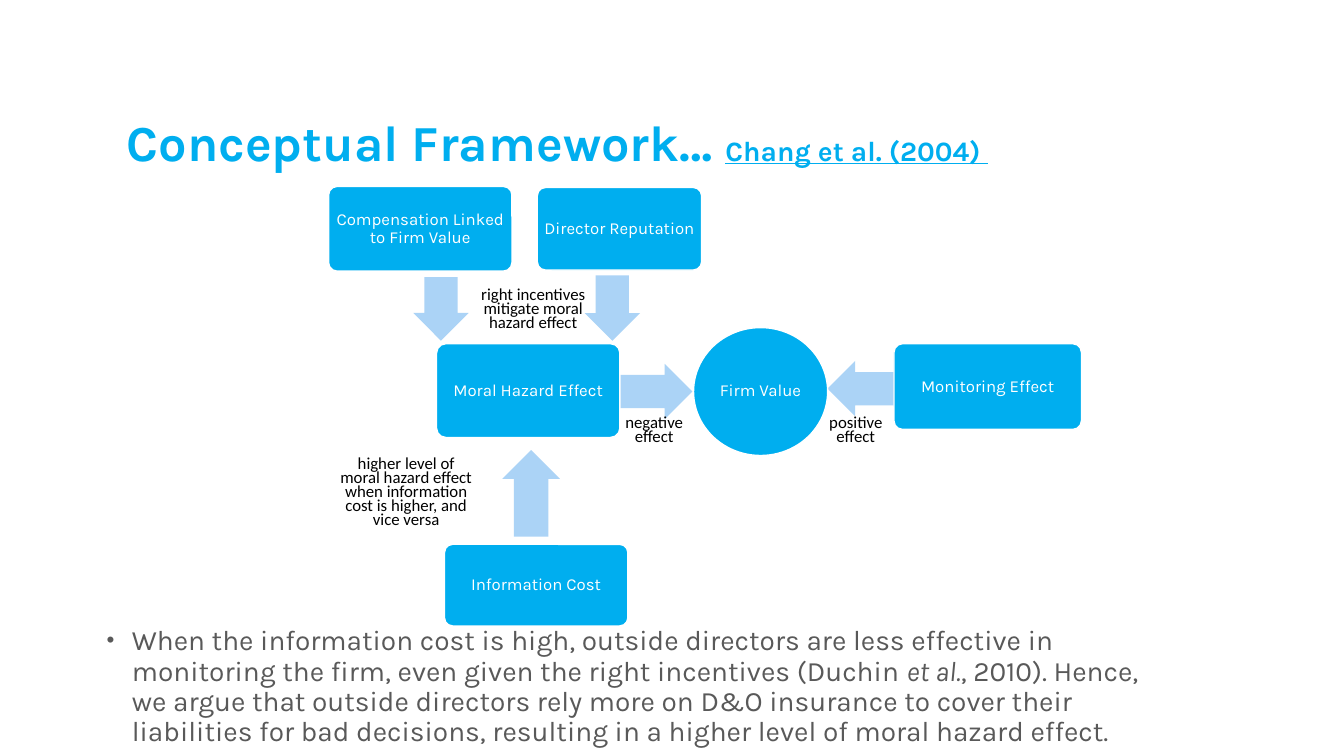
from dataclasses import dataclass
from typing import NamedTuple

from lxml import etree
from pptx import Presentation
from pptx.dml.color import RGBColor
from pptx.enum.shapes import MSO_SHAPE
from pptx.enum.text import MSO_ANCHOR, PP_ALIGN
from pptx.oxml.ns import qn
from pptx.shapes.autoshape import Shape
from pptx.slide import Slide
from pptx.text.text import TextFrame, _Paragraph
from pptx.util import Pt

ROUNDED, OVAL = MSO_SHAPE.ROUNDED_RECTANGLE, MSO_SHAPE.OVAL
DOWN, UP = MSO_SHAPE.DOWN_ARROW, MSO_SHAPE.UP_ARROW
LEFT, RIGHT = MSO_SHAPE.LEFT_ARROW, MSO_SHAPE.RIGHT_ARROW
TOP, MIDDLE, BOTTOM = MSO_ANCHOR.TOP, MSO_ANCHOR.MIDDLE, MSO_ANCHOR.BOTTOM
CENTER, LEFT_ALIGNED = PP_ALIGN.CENTER, PP_ALIGN.LEFT


@dataclass(frozen=True)
class Theme:
    accent: str = "00AEEF"
    arrow: str = "ABD3F6"
    white: str = "FFFFFF"
    body: str = "595959"
    ink: str = "000000"
    main_font: str = "Karla"
    label_font: str = "Calibri"
    title_size: int = 36
    text_size: int = 20
    diagram_size: int = 12


THEME = Theme()


class Box(NamedTuple):
    left: float
    top: float
    width: float
    height: float


class Node(NamedTuple):
    text: str
    box: Box
    outline: MSO_SHAPE = ROUNDED


class Arrow(NamedTuple):
    direction: MSO_SHAPE
    box: Box


class Label(NamedTuple):
    text: str
    box: Box


ARROWS = [
    Arrow(RIGHT, Box(372.2, 259.9, 122.4, 39.6)),
    Arrow(UP, Box(358.9, 321.5, 41, 61.9)),
    Arrow(DOWN, Box(295.2, 198, 39.6, 45.4)),
    Arrow(DOWN, Box(417.6, 196.6, 39.6, 46.8)),
    Arrow(LEFT, Box(591.1, 257.8, 121, 39.6)),
]
NODES = [
    Node("Firm Value", Box(495.4, 234, 95.8, 91.4), OVAL),
    Node("Moral Hazard Effect", Box(311.8, 245.5, 131, 67)),
    Node("Information Cost", Box(317.5, 388.8, 131, 58.3)),
    Node("Compensation Linked to Firm Value", Box(234.7, 133.2, 131, 60.5)),
    Node("Director Reputation ", Box(383.8, 133.9, 117.4, 59)),
    Node("Monitoring Effect", Box(638.6, 245.5, 133.9, 61.2)),
]
LABELS = [
    Label("right incentives mitigate moral hazard effect", Box(329.8, 203.8, 102.2, 50.4)),
    Label(
        "higher level of moral hazard effect when information cost is higher, and vice versa",
        Box(234, 324, 112.3, 53.3),
    ),
    Label("negative effect", Box(437.8, 295.2, 59, 28.8)),
    Label("positive effect", Box(581.8, 295.2, 59, 28.8)),
]
TITLE_BOX = Box(83.5, 41.8, 684, 84.2)
BODY_BOX = Box(65.5, 444.2, 756, 95.8)


def in_points(box: Box) -> list[Pt]:
    return [Pt(length) for length in box]


def apply(target: object, formats: dict) -> None:
    for attribute, value in formats.items():
        setattr(target, attribute, value)


def add_run(paragraph: _Paragraph, text: str, size: int, color: str, font: str, **extra: bool) -> None:
    run = paragraph.add_run()
    run.text = text
    apply(run.font, {"name": font, "size": Pt(size), **extra})
    run.font.color.rgb = RGBColor.from_string(color)


def first_paragraph(
    frame: TextFrame, spacing: float | Pt, anchor: MSO_ANCHOR, alignment: PP_ALIGN
) -> _Paragraph:
    apply(frame, {"word_wrap": True, "vertical_anchor": anchor})
    paragraph = frame.paragraphs[0]
    apply(paragraph, {"line_spacing": spacing, "alignment": alignment})
    return paragraph


def add_filled(slide: Slide, outline: MSO_SHAPE, box: Box, color: str) -> Shape:
    shape = slide.shapes.add_shape(outline, *in_points(box))
    shape.shadow.inherit = False
    shape.fill.solid()
    shape.fill.fore_color.rgb = RGBColor.from_string(color)
    return shape


def add_arrow(slide: Slide, arrow: Arrow) -> None:
    shape = add_filled(slide, arrow.direction, arrow.box, THEME.arrow)
    shape.line.fill.background()
    shape.adjustments[0], shape.adjustments[1] = 0.6, 0.5


def add_node(slide: Slide, node: Node) -> None:
    shape = add_filled(slide, node.outline, node.box, THEME.accent)
    shape.line.color.rgb = RGBColor.from_string(THEME.white)
    shape.line.width = Pt(1)
    if node.outline == ROUNDED:
        shape.adjustments[0] = 0.1
    inset = Pt(2 if node.outline == ROUNDED else 0.7)
    sides = ("left", "top", "right", "bottom")
    apply(shape.text_frame, {f"margin_{side}": inset for side in sides})
    paragraph = first_paragraph(shape.text_frame, 0.9, MIDDLE, CENTER)
    add_run(paragraph, node.text, THEME.diagram_size, THEME.white, THEME.main_font)


def add_label(slide: Slide, label: Label) -> None:
    frame = slide.shapes.add_textbox(*in_points(label.box)).text_frame
    paragraph = first_paragraph(frame, Pt(10), TOP, CENTER)
    add_run(paragraph, label.text, THEME.diagram_size, THEME.ink, THEME.label_font)


def add_title(slide: Slide) -> None:
    frame = slide.shapes.add_textbox(*in_points(TITLE_BOX)).text_frame
    paragraph = first_paragraph(frame, 0.8, BOTTOM, LEFT_ALIGNED)
    style = {"color": THEME.accent, "font": THEME.main_font, "bold": True}
    add_run(paragraph, "Conceptual Framework… ", THEME.title_size, **style)
    add_run(paragraph, "Chang et al. (2004) ", THEME.text_size, underline=True, **style)


def add_bullet(paragraph: _Paragraph) -> None:
    properties = paragraph._p.get_or_add_pPr()
    apply_indent = {"marL": Pt(21.6), "indent": Pt(-18)}
    for attribute, length in apply_indent.items():
        properties.set(attribute, str(int(length)))
    color = etree.SubElement(properties, qn("a:buClr"))
    etree.SubElement(color, qn("a:srgbClr"), val=THEME.body)
    etree.SubElement(properties, qn("a:buSzPct"), val="80000")
    etree.SubElement(properties, qn("a:buFont"), typeface="Arial")
    etree.SubElement(properties, qn("a:buChar"), char="•")


def add_body(slide: Slide) -> None:
    frame = slide.shapes.add_textbox(*in_points(BODY_BOX)).text_frame
    paragraph = first_paragraph(frame, 0.9, TOP, LEFT_ALIGNED)
    add_bullet(paragraph)
    passages = [
        ("When the information cost is high, outside directors are less effective in monitoring "
         "the firm, even given the right incentives (Duchin ", False),
        ("et al.", True),
        (", 2010). Hence, we argue that outside directors rely more on D&O insurance to cover "
         "their liabilities for bad decisions, resulting in a higher level of moral hazard "
         "effect.", False),
    ]
    for passage, italic in passages:
        add_run(paragraph, passage, THEME.text_size, THEME.body, THEME.main_font, italic=italic)


def main() -> None:
    deck = Presentation()
    apply(deck, {"slide_width": Pt(960), "slide_height": Pt(540)})
    slide = deck.slides.add_slide(deck.slide_layouts[6])
    add_title(slide)
    add_body(slide)
    for arrow in ARROWS:
        add_arrow(slide, arrow)
    for node in NODES:
        add_node(slide, node)
    for label in LABELS:
        add_label(slide, label)
    deck.save("out.pptx")


if __name__ == "__main__":
    main()
